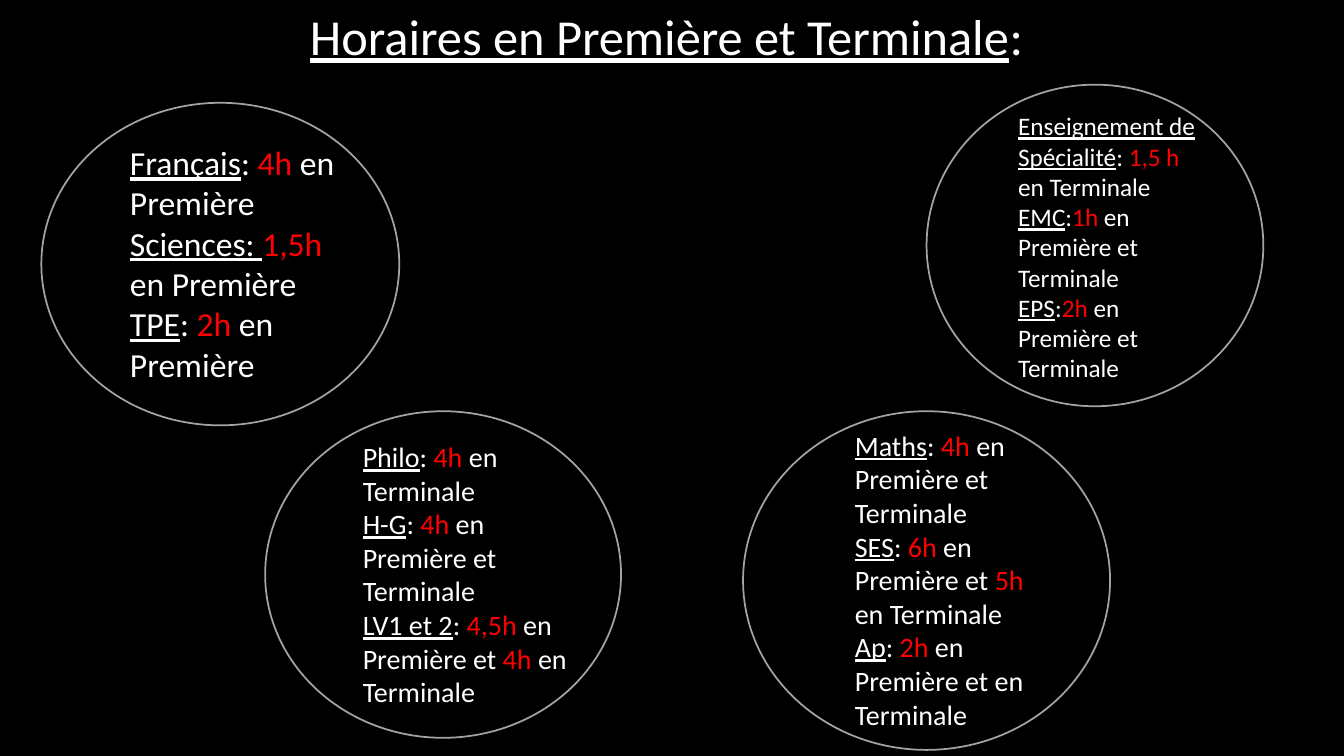
from pptx import Presentation
from pptx.dml.color import RGBColor
from pptx.enum.shapes import MSO_SHAPE
from pptx.enum.text import MSO_ANCHOR, PP_ALIGN
from pptx.util import Inches, Pt

BLACK, WHITE, RED, GREY = "000000", "FFFFFF", "FF0000", "A3A3A3"

# Circle box, text box, text size, lines
TOPICS = [
    ((0.41, 1.02, 3.55, 3.2), (1.19, 1.36, 2.39, 2.52), 24, [
        "_Français|:|* 4h |en Première",
        "_Sciences: |*1,5h| en Première",
        "_TPE|: |*2h| en Première"]),
    ((2.63, 4.08, 3.53, 3.24), (3.5, 4.31, 2.33, 2.79), 20, [
        "_Philo|: |*4h| en Terminale",
        "_H-G|: |*4h| en Première et Terminale",
        "_LV1 et 2|: |*4,5h |en Première et |*4h| en Terminale"]),
    ((7.37, 4.08, 3.64, 3.36), (8.38, 4.2, 2.2, 3.13), 20, [
        "_Maths|: |*4h |en Première et Terminale",
        "_SES|: |*6h |en Première et |*5h| en Terminale",
        "_Ap|: |*2h| en Première et en Terminale"]),
    ((9.19, 0.84, 3.34, 3.19), (10, 1.05, 2.02, 2.83), 18, [
        "_Enseignement de Spécialité|: |*1,5 h |en Terminale",
        "_EMC|:|*1h| en Première et Terminale",
        "_EPS|:|*2h| en Première et Terminale"]),
]


def color(code):
    return RGBColor.from_string(code)


def write(frame, lines, size, font="Calibri", align=PP_ALIGN.LEFT):
    """Fill a frame; "|" parts the runs, "_" underlines one, "*" reddens it."""
    frame.word_wrap = True
    frame.vertical_anchor = MSO_ANCHOR.TOP
    for i, line in enumerate(lines):
        para = frame.paragraphs[0] if i == 0 else frame.add_paragraph()
        para.alignment = align
        for part in line.split("|"):
            run = para.add_run()
            run.text = part.lstrip("_*")
            run.font.name = font
            run.font.size = Pt(size)
            run.font.underline = part.startswith("_")
            run.font.color.rgb = color(RED if part.startswith("*") else WHITE)


class Deck:
    def __init__(self, font="Calibri"):
        self.font = font
        self.deck = Presentation()
        self.deck.slide_width = Inches(13.33)
        self.deck.slide_height = Inches(7.5)
        self.slide = self.deck.slides.add_slide(self.deck.slide_layouts[6])

    def panel(self, box, lines, size):
        shape = self.slide.shapes.add_shape(MSO_SHAPE.RECTANGLE, *map(Inches, box))
        shape.shadow.inherit = False
        shape.fill.solid()
        shape.fill.fore_color.rgb = color(BLACK)
        shape.line.fill.background()
        write(shape.text_frame, lines, size, self.font, PP_ALIGN.CENTER)

    def circle(self, group, box):
        shape = group.shapes.add_shape(MSO_SHAPE.OVAL, *map(Inches, box))
        shape.shadow.inherit = False
        shape.fill.background()
        shape.line.color.rgb = color(GREY)
        shape.line.width = Pt(1.25)

    def label(self, group, box, lines, size):
        shape = group.shapes.add_textbox(*map(Inches, box))
        write(shape.text_frame, lines, size, self.font)

    def topic(self, ring, area, size, lines):
        """Group a circle with its text."""
        group = self.slide.shapes.add_group_shape()
        self.circle(group, ring)
        self.label(group, area, lines, size)


def main():
    deck = Deck()
    deck.panel((-0.11, 0, 13.44, 7.57), ["_Horaires en Première et Terminale|:"], 36)
    for topic in TOPICS:
        deck.topic(*topic)
    deck.deck.save("out.pptx")


if __name__ == "__main__":
    main()
